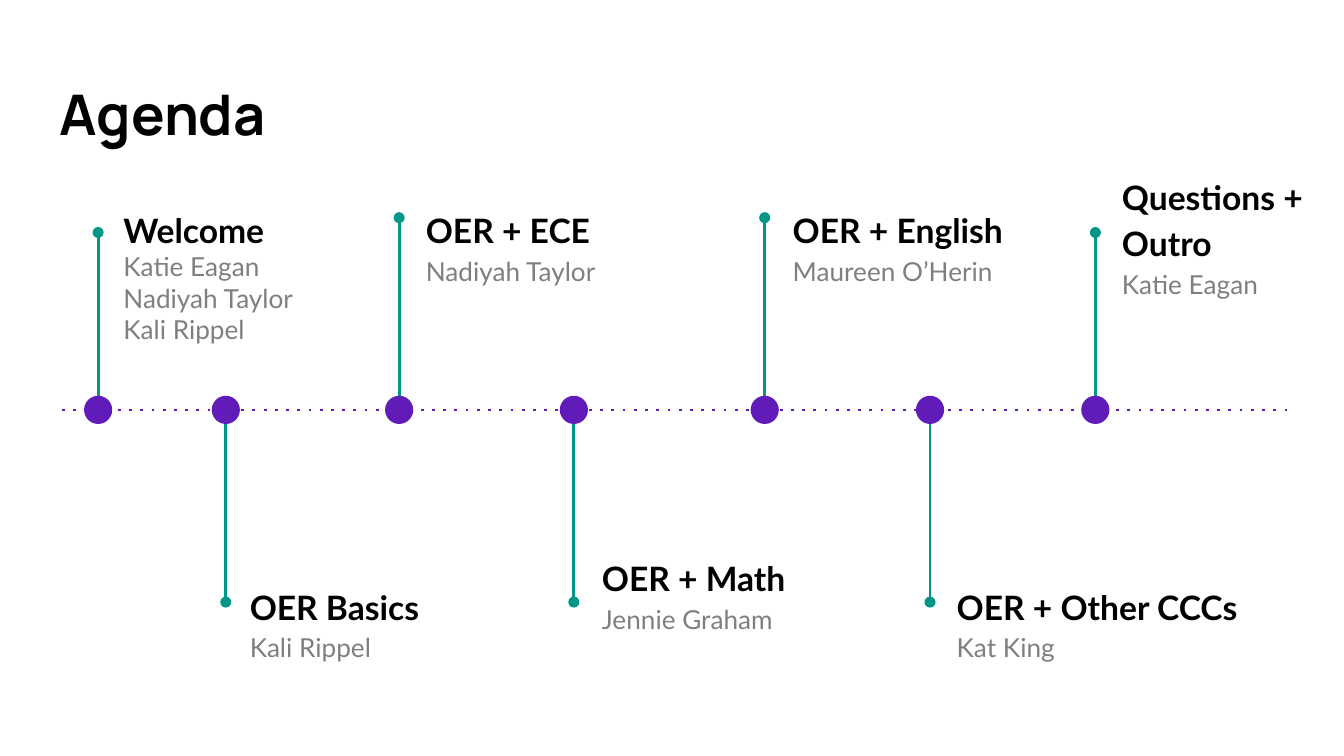
from dataclasses import dataclass

from lxml import etree
from pptx import Presentation
from pptx.dml.color import RGBColor
from pptx.enum.shapes import MSO_CONNECTOR as LINE, MSO_SHAPE as SHAPE
from pptx.enum.text import MSO_ANCHOR as ANCHOR, MSO_AUTO_SIZE as FIT, PP_ALIGN as ALIGN
from pptx.oxml.ns import qn
from pptx.util import Inches, Pt


@dataclass(frozen=True)
class Theme:
    black: RGBColor = RGBColor.from_string("000000")
    grey: RGBColor = RGBColor.from_string("7F7F7F")
    purple: RGBColor = RGBColor.from_string("611BB8")
    teal: RGBColor = RGBColor.from_string("009688")
    title_font: str = "Manrope"
    body_font: str = "Lato"
    title_size: Pt = Pt(30)
    topic_size: Pt = Pt(18)
    speaker_size: Pt = Pt(14)
    line_width: Pt = Pt(1.5)


theme = Theme()
TITLE = dict(name=theme.title_font, size=theme.title_size, color=theme.black, bold=True)
TOPIC = dict(name=theme.body_font, size=theme.topic_size, color=theme.black, bold=True)
SPEAKER = dict(name=theme.body_font, size=theme.speaker_size, color=theme.grey, bold=False)


def write(frame, lines):
    """Fill a text frame with (text, format, line spacing) paragraphs."""
    frame.word_wrap = True
    frame.auto_size = FIT.NONE
    frame.vertical_anchor = ANCHOR.TOP
    for side in ("left", "top", "right", "bottom"):
        setattr(frame, f"margin_{side}", Inches(0.1))
    for number, (text, style, spacing) in enumerate(lines):
        paragraph = frame.add_paragraph() if number else frame.paragraphs[0]
        paragraph.alignment = ALIGN.LEFT
        paragraph.line_spacing = spacing
        run = paragraph.add_run()
        run.text = text
        for key, value in style.items():
            if key == "color":
                run.font.color.rgb = value
            else:
                setattr(run.font, key, value)


def add_line(start, end, color, detail, value):
    """Draw a line with one extra setting, a dash or an end mark."""
    line = slide.shapes.add_connector(LINE.STRAIGHT, *map(Inches, start + end))
    line.line.color.rgb = color
    line.line.width = theme.line_width
    outline = line._element.spPr.find(qn("a:ln"))
    etree.SubElement(outline, qn(f"a:{detail}")).attrib.update(value)
    etree.SubElement(line._element.spPr, qn("a:effectLst"))


deck = Presentation()
deck.slide_width = Inches(10)
deck.slide_height = deck.slide_width * 9 // 16
slide = deck.slides.add_slide(deck.slide_layouts[5])

title = slide.shapes.title
title.left, title.top, title.width, title.height = map(Inches, (0.34, 0.49, 9.32, 0.68))
write(title.text_frame, [("Agenda", TITLE, 1)])

AXIS_Y = 3.05
DOT = 0.21
RADIUS = DOT / 2
add_line((0.46, AXIS_Y), (9.58, AXIS_Y), theme.purple, "prstDash", {"val": "dot"})

# Dot centre x, stem end y, text left, top and width, speaker spacing, topic, speakers
sessions = [
    (0.73, 1.73, 0.82, 1.42, 2.91, 1, "Welcome", ["Katie Eagan", "Nadiyah Taylor", "Kali Rippel"]),
    (1.68, 4.48, 1.76, 4.22, 2.91, 1.15, "OER Basics", ["Kali Rippel"]),
    (2.97, 1.62, 3.07, 1.42, 2.91, 1.15, "OER + ECE", ["Nadiyah Taylor"]),
    (4.27, 4.48, 4.38, 4.01, 2.91, 1.15, "OER + Math", ["Jennie Graham"]),
    (5.69, 1.62, 5.80, 1.42, 2.91, 1.15, "OER + English", ["Maureen O’Herin"]),
    (6.92, 4.48, 7.02, 4.22, 2.91, 1.15, "OER + Other CCCs", ["Kat King"]),
    (8.15, 1.73, 8.25, 1.17, 1.84, 1.15, "Questions + Outro", ["Katie Eagan"]),
]

for x, stem_end, left, top, width, spacing, topic, speakers in sessions:
    stem_start = AXIS_Y + (RADIUS if stem_end > AXIS_Y else -RADIUS)
    add_line((x, stem_start), (x, stem_end), theme.teal, "tailEnd", {"type": "oval"})

    dot = slide.shapes.add_shape(
        SHAPE.OVAL, Inches(x - RADIUS), Inches(AXIS_Y - RADIUS), Inches(DOT), Inches(DOT))
    dot.shadow.inherit = False
    dot.fill.solid()
    dot.fill.fore_color.rgb = theme.purple
    dot.line.fill.background()

    label = slide.shapes.add_textbox(*map(Inches, (left, top, width, 1.06)))
    write(label.text_frame,
          [(topic, TOPIC, 1.15)] + [(name, SPEAKER, spacing) for name in speakers])

deck.save("out.pptx")
